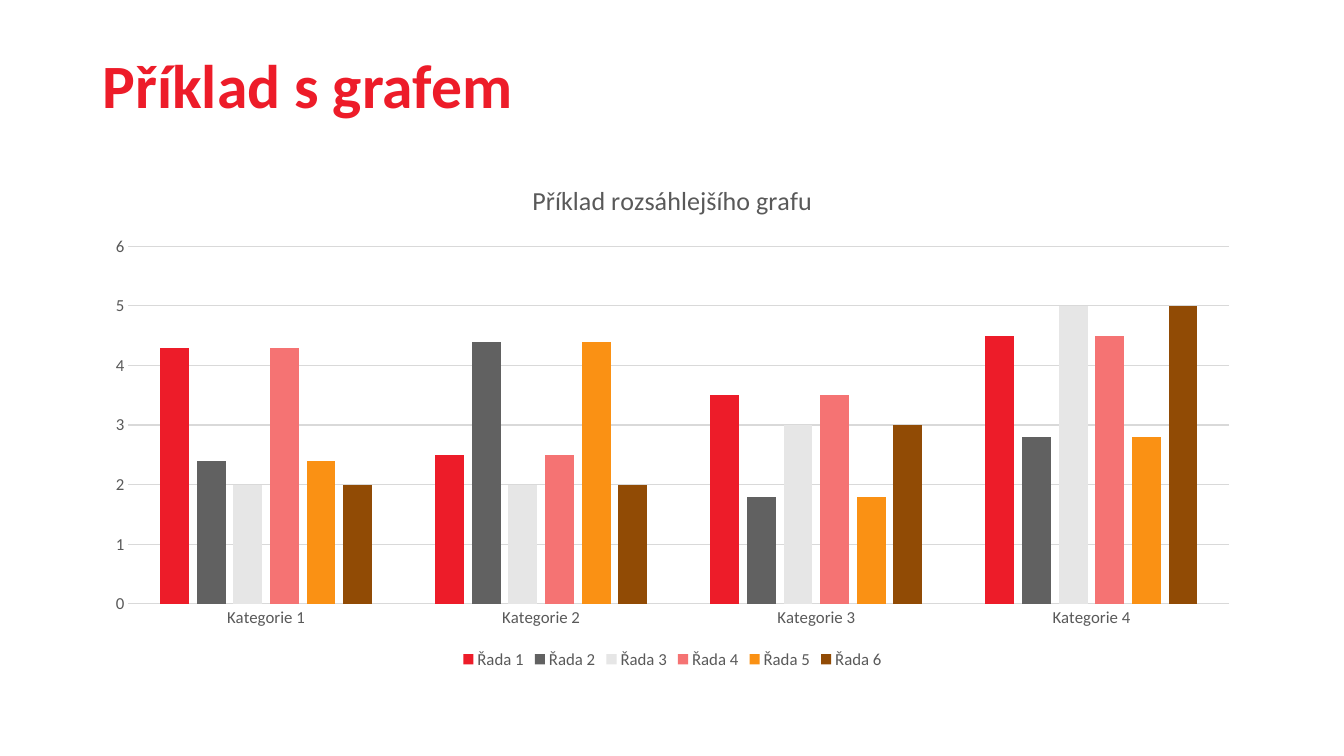
from pptx import Presentation
from pptx.chart.data import CategoryChartData
from pptx.dml.color import RGBColor
from pptx.enum.chart import XL_CHART_TYPE, XL_LEGEND_POSITION, XL_TICK_MARK
from pptx.enum.text import MSO_ANCHOR
from pptx.util import Inches, Pt

HEADING = "Příklad s grafem"
CHART_TITLE = "Příklad rozsáhlejšího grafu"
CATEGORIES = ["Kategorie 1", "Kategorie 2", "Kategorie 3", "Kategorie 4"]
SERIES = [
    ("Řada 1", (4.3, 2.5, 3.5, 4.5), "ED1C29"),
    ("Řada 2", (2.4, 4.4, 1.8, 2.8), "616161"),
    ("Řada 3", (2, 2, 3, 5), "E6E6E6"),
    ("Řada 4", (4.3, 2.5, 3.5, 4.5), "F57373"),
    ("Řada 5", (2.4, 4.4, 1.8, 2.8), "FA9114"),
    ("Řada 6", (2, 2, 3, 5), "914B05"),
]

GRID_COLOR = "D9D9D9"
THEME = {
    "heading": {"name": "Calibri", "size": Pt(44), "bold": True, "color": "ED1C29"},
    "chart_title": {"name": "Calibri", "size": Pt(18.6), "bold": False, "color": "595959"},
    "label": {"name": "Calibri", "size": Pt(12), "bold": False, "color": "595959"},
}

LEFT, WIDTH = Inches(0.92), Inches(11.5)


def apply_font(font, style):
    for attribute, value in THEME[style].items():
        if attribute == "color":
            font.color.rgb = RGBColor.from_string(value)
        else:
            setattr(font, attribute, value)


def draw_grid_line(line):
    line.color.rgb = RGBColor.from_string(GRID_COLOR)
    line.width = Pt(0.75)


def add_heading(slide):
    frame = slide.shapes.add_textbox(LEFT, Inches(0.37), WIDTH, Inches(1.01)).text_frame
    frame.word_wrap = True
    frame.vertical_anchor = MSO_ANCHOR.MIDDLE
    heading = frame.paragraphs[0]
    heading.line_spacing = 0.9
    run = heading.add_run()
    run.text = HEADING
    apply_font(run.font, "heading")


def add_series_chart(slide):
    data = CategoryChartData()
    data.categories = CATEGORIES
    for name, values, _ in SERIES:
        data.add_series(name, values)
    chart = slide.shapes.add_chart(
        XL_CHART_TYPE.COLUMN_CLUSTERED, LEFT, Inches(1.61), WIDTH, Inches(5.07), data
    ).chart
    apply_font(chart.font, "label")

    chart.has_title = True
    title = chart.chart_title
    title.include_in_layout = False
    title.text_frame.text = CHART_TITLE
    apply_font(title.text_frame.paragraphs[0].runs[0].font, "chart_title")

    chart.has_legend = True
    chart.legend.position = XL_LEGEND_POSITION.BOTTOM
    chart.legend.include_in_layout = False
    apply_font(chart.legend.font, "label")

    for axis in (chart.category_axis, chart.value_axis):
        axis.major_tick_mark = axis.minor_tick_mark = XL_TICK_MARK.NONE
        apply_font(axis.tick_labels.font, "label")
    draw_grid_line(chart.category_axis.format.line)
    draw_grid_line(chart.value_axis.major_gridlines.format.line)
    chart.value_axis.format.line.fill.background()
    chart.value_axis.minimum_scale = 0
    chart.value_axis.maximum_scale = 6
    chart.value_axis.major_unit = 1

    plot = chart.plots[0]
    plot.vary_by_categories = False
    plot.gap_width = 219
    plot.overlap = -27
    for series, (_, _, color) in zip(plot.series, SERIES):
        series.format.fill.solid()
        series.format.fill.fore_color.rgb = RGBColor.from_string(color)


def main():
    presentation = Presentation()
    presentation.slide_width = Inches(13.33)
    presentation.slide_height = Inches(7.5)
    slide = presentation.slides.add_slide(presentation.slide_layouts[6])
    add_heading(slide)
    add_series_chart(slide)
    presentation.save("out.pptx")


if __name__ == "__main__":
    main()
